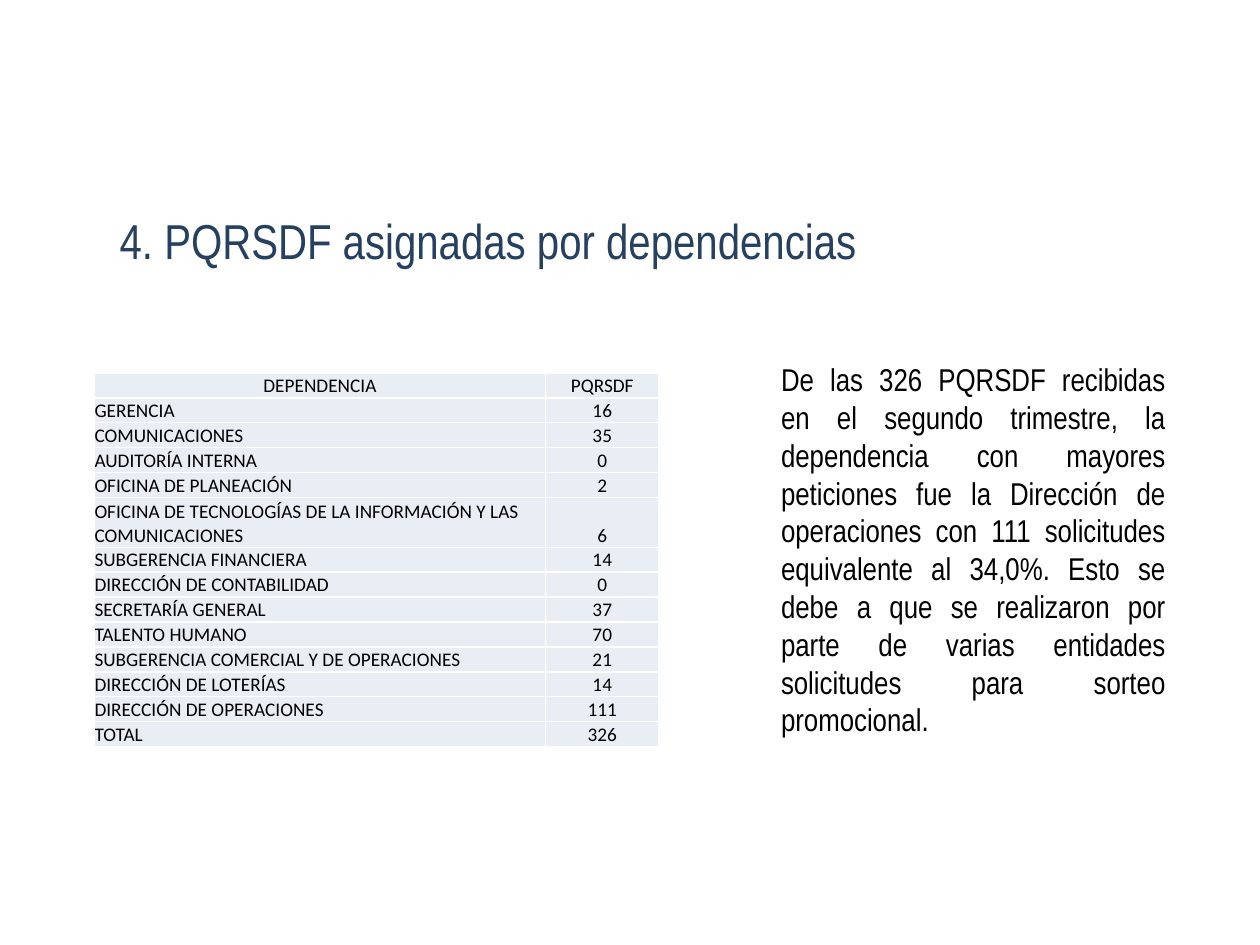
from dataclasses import dataclass

from lxml.etree import SubElement
from pptx import Presentation
from pptx.dml.color import RGBColor
from pptx.enum.text import MSO_ANCHOR, MSO_AUTO_SIZE, PP_ALIGN
from pptx.oxml.ns import qn
from pptx.util import Inches, Pt


@dataclass(frozen=True)
class Theme:
    title: str = "254061"
    text: str = "000000"
    cell: str = "E9EDF4"
    border: str = "FFFFFF"
    heading_font: str = "Arial Narrow"
    table_font: str = "Calibri"
    title_size: float = 28
    body_size: float = 18
    table_size: float = 11
    line_width: float = 1
    outline_width: float = 0.75


theme = Theme()


def write(tf, text, font, size, color, **paragraph):
    p = tf.paragraphs[0]
    for name, value in paragraph.items():
        setattr(p, name, value)
    r = p.add_run()
    r.text = text
    for name, value in {"name": font, "size": Pt(size)}.items():
        setattr(r.font, name, value)
    r.font.color.rgb = RGBColor.from_string(color)
    return p


def add_line(parent, tag, width, color):
    ln = SubElement(parent, qn(tag), w=str(Pt(width)))
    fill = SubElement(ln, qn("a:solidFill"))
    SubElement(fill, qn("a:srgbClr"), val=color)
    return ln


prs = Presentation()
prs.slide_width, prs.slide_height = Inches(10), Inches(7.5)
s = prs.slides.add_slide(prs.slide_layouts[5])

title = s.shapes.title
frame = {"left": 0.35, "top": 1.39, "width": 6.95, "height": 0.72}
for name, value in frame.items():
    setattr(title, name, Inches(value))
tf = title.text_frame
text_format = {"word_wrap": True, "auto_size": MSO_AUTO_SIZE.SHAPE_TO_FIT_TEXT,
               "vertical_anchor": MSO_ANCHOR.TOP}
for name, value in text_format.items():
    setattr(tf, name, value)
p = write(tf, "4. PQRSDF asignadas por dependencias", theme.heading_font,
          theme.title_size, theme.title, alignment=PP_ALIGN.LEFT, line_spacing=1.5)
pPr = p._p.get_or_add_pPr()
pPr.set("marL", str(Inches(0.5)))
pPr.set("indent", "0")
rPr = p.runs[0]._r.get_or_add_rPr()
rPr.insert(0, add_line(rPr, "a:ln", theme.outline_width, theme.title))

body = s.shapes.add_textbox(Inches(6.1), Inches(2.81), Inches(3.25), Inches(3.13))
tf = body.text_frame
for name, value in text_format.items():
    setattr(tf, name, value)
write(tf, "De las 326 PQRSDF recibidas en el segundo trimestre, la dependencia con "
      "mayores peticiones fue la Dirección de operaciones con 111 solicitudes "
      "equivalente al 34,0%. Esto se debe a que se realizaron por parte de varias "
      "entidades solicitudes para sorteo promocional.",
      theme.heading_font, theme.body_size, theme.text, alignment=PP_ALIGN.JUSTIFY)

rows = [
    ("DEPENDENCIA", "PQRSDF"),
    ("GERENCIA", "16"),
    ("COMUNICACIONES", "35"),
    ("AUDITORÍA INTERNA", "0"),
    ("OFICINA DE PLANEACIÓN", "2"),
    ("OFICINA DE TECNOLOGÍAS DE LA INFORMACIÓN Y LAS COMUNICACIONES", "6"),
    ("SUBGERENCIA FINANCIERA", "14"),
    ("DIRECCIÓN DE CONTABILIDAD", "0"),
    ("SECRETARÍA GENERAL", "37"),
    ("TALENTO HUMANO", "70"),
    ("SUBGERENCIA COMERCIAL Y DE OPERACIONES", "21"),
    ("DIRECCIÓN DE LOTERÍAS", "14"),
    ("DIRECCIÓN DE OPERACIONES", "111"),
    ("TOTAL", "326"),
]
two_line_row = 5
row_height = 2.97 / (len(rows) + 1)
cell_format = {"margin_left": 0, "margin_right": 0, "margin_top": 0,
               "margin_bottom": 0, "vertical_anchor": MSO_ANCHOR.BOTTOM}

table = s.shapes.add_table(len(rows), 2, Inches(0.75), Inches(2.96),
                           Inches(4.48), Inches(2.97)).table
for col, width in zip(table.columns, (3.58, 0.9)):
    col.width = Inches(width)
for i, row in enumerate(rows):
    table.rows[i].height = Inches(row_height * (2 if i == two_line_row else 1))
    for j, text in enumerate(row):
        cell = table.cell(i, j)
        for name, value in cell_format.items():
            setattr(cell, name, value)
        for side in "LRTB":
            add_line(cell._tc.get_or_add_tcPr(), f"a:ln{side}",
                     theme.line_width, theme.border)
        cell.fill.solid()
        cell.fill.fore_color.rgb = RGBColor.from_string(theme.cell)
        centred = i == 0 or j == 1
        write(cell.text_frame, text, theme.table_font, theme.table_size, theme.text,
              alignment=PP_ALIGN.CENTER if centred else PP_ALIGN.LEFT)

prs.save("out.pptx")
